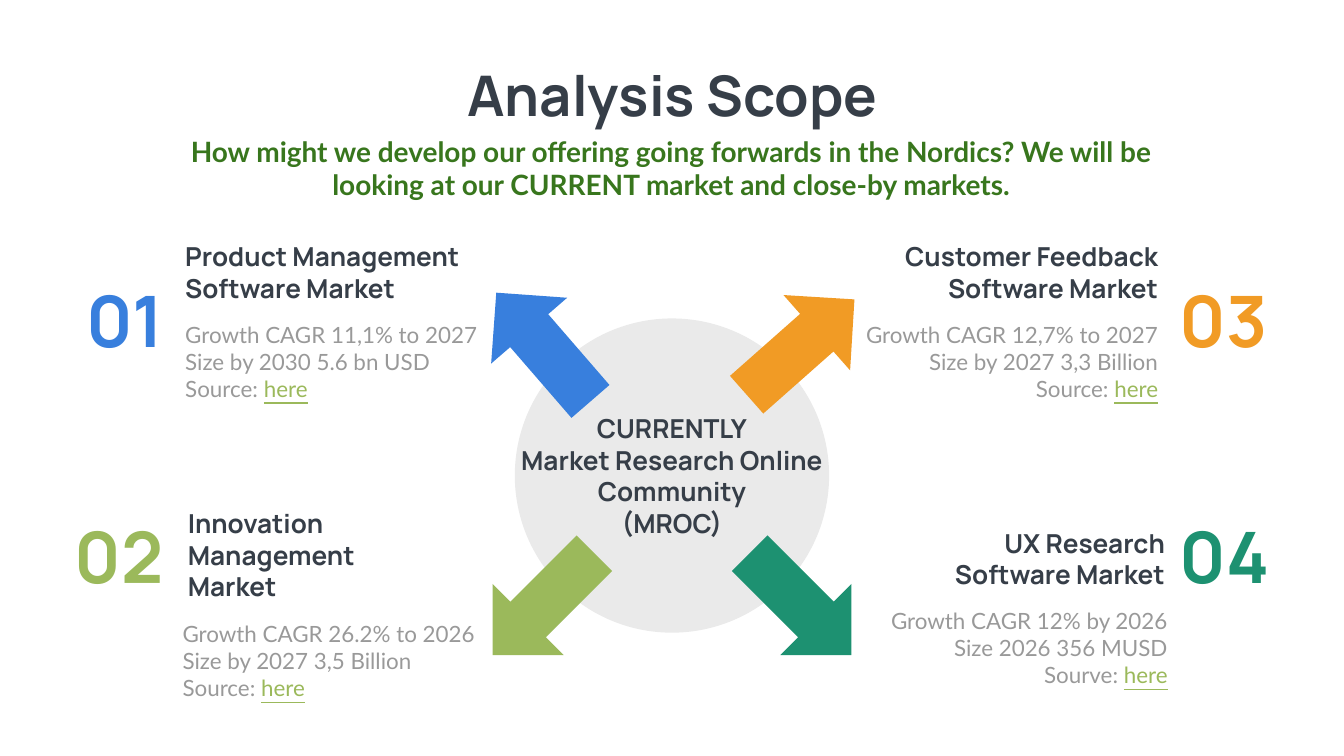
import pptx
import pptx.dml.color
import pptx.enum.shapes
import pptx.enum.text
import pptx.util
from lxml import etree

Cm = pptx.util.Cm
SHAPE = pptx.enum.shapes.MSO_SHAPE
ALIGN = pptx.enum.text.PP_ALIGN
ANCHOR = pptx.enum.text.MSO_ANCHOR
NS = "{http://schemas.openxmlformats.org/drawingml/2006/main}"

COLORS = {
    "dark": "363E48", "gray": "999999", "deep": "38761D", "disc": "EAEAEA",
    "blue": "387FDD", "orange": "F19B25", "green": "9BB95B", "teal": "1D9171",
}


def rgb(name):
    return pptx.dml.color.RGBColor.from_string(COLORS[name])


def add_run(p, text, size=14, font="Manrope", color="dark", bold=True, underline=False):
    r = p.add_run()
    r.text = text
    r.font.size = pptx.util.Pt(size)
    r.font.name = font
    r.font.bold = bold
    r.font.underline = underline
    r.font.color.rgb = rgb(color)


class ScopeSlide:
    def __init__(self, prs, layout):
        self.s = prs.slides.add_slide(prs.slide_layouts[layout])

    def fill_text(self, sp, text, align=ALIGN.LEFT, anchor=ANCHOR.TOP, **fmt):
        tf = sp.text_frame
        tf.word_wrap = True
        tf.auto_size = pptx.enum.text.MSO_AUTO_SIZE.NONE
        tf.vertical_anchor = anchor
        tf.margin_left = tf.margin_right = Cm(0.1)
        tf.margin_top = tf.margin_bottom = Cm(0.05)
        for i, line in enumerate(text.split("\n")):
            p = tf.add_paragraph() if i else tf.paragraphs[0]
            p.alignment = align
            p.space_before = pptx.util.Pt(0)
            add_run(p, line, **fmt)
        return tf

    def place(self, sp, x, y, w, h):
        sp.left, sp.top, sp.width, sp.height = Cm(x), Cm(y), Cm(w), Cm(h)

    def text(self, box, text, **fmt):
        sp = self.s.shapes.add_textbox(*map(Cm, box))
        self.fill_text(sp, text, **fmt)

    def title(self, box, text, **fmt):
        sp = self.s.shapes.title
        self.place(sp, *box)
        self.fill_text(sp, text, **fmt)

    def details(self, idx, box, text, align):
        sp = self.s.placeholders[idx]
        self.place(sp, *box)
        tf = self.fill_text(sp, text, align=align, size=12, font="Lato",
                            color="gray", bold=False)
        for p in tf.paragraphs:
            pPr = p._p.get_or_add_pPr()
            pPr.set("marL", "0")
            pPr.set("indent", "0")
            etree.SubElement(pPr, NS + "buNone")
        add_run(tf.paragraphs[-1], "here", size=12, font="Lato", color="green",
                bold=False, underline=True)

    def shape(self, kind, cx, cy, w, h, color, rotation=0):
        sp = self.s.shapes.add_shape(kind, Cm(cx - w / 2), Cm(cy - h / 2), Cm(w), Cm(h))
        sp.rotation = rotation
        sp.shadow.inherit = False
        sp.fill.solid()
        sp.fill.fore_color.rgb = rgb(color)
        sp.line.fill.background()


def main():
    prs = pptx.Presentation()
    prs.slide_width, prs.slide_height = Cm(25.4), Cm(14.29)
    slide = ScopeSlide(prs, 4)

    slide.title((6.12, 1.09, 13.18, 1.37), "Analysis Scope", align=ALIGN.CENTER, size=30)
    slide.text((2.77, 2.49, 19.84, 1.37),
               "How might we develop our offering going forwards in the Nordics? "
               "We will be looking at our CURRENT market and close-by markets.",
               align=ALIGN.CENTER, size=15, font="Lato", color="deep")

    cx, cy, d, reach = 12.7, 8.99, 5.94, 2.43
    slide.shape(SHAPE.OVAL, cx, cy, d, d, "disc")
    slide.text((cx - d / 2, cy - d / 2, d, d),
               "CURRENTLY\nMarket Research Online Community\n(MROC)",
               align=ALIGN.CENTER, anchor=ANCHOR.MIDDLE)

    left, right = ALIGN.LEFT, ALIGN.RIGHT
    markets = [
        ("blue", -1, -1, 229.1, "Product Management Software Market", (3.4, 4.5, 5.94),
         "Growth CAGR 11,1% to 2027\nSize by 2030 5.6 bn USD\nSource: ", (3.4, 6.02, 5.84)),
        ("green", -1, 1, 135, "Innovation Management Market", (3.45, 9.55, 5),
         "Growth CAGR 26.2% to 2026\nSize by 2027 3,5 Billion\nSource: ", (3.35, 11.68, 5.84)),
        ("orange", 1, -1, 318.5, "Customer Feedback Software Market", (16.33, 4.5, 5.66),
         "Growth CAGR 12,7% to 2027\nSize by 2027 3,3 Billion\nSource: ", (16.05, 6.02, 5.94)),
        ("teal", 1, 1, 45, "UX Research Software Market", (17.12, 9.91, 5),
         "Growth CAGR 12% by 2026\nSize 2026 356 MUSD\nSourve: ", (16.66, 11.43, 5.51)),
    ]
    for i, (color, dx, dy, angle, name, name_box, facts, facts_box) in enumerate(markets, 1):
        inner, outer = (left, right) if dx < 0 else (right, left)
        slide.shape(SHAPE.RIGHT_ARROW, cx + dx * reach, cy + dy * reach, 2.72, 1.9,
                    color, angle)
        slide.text((1.04 if dx < 0 else 22.2, 5.18 if dy < 0 else 9.63, 2.16, 1.7),
                   f"{i:02d}", align=outer, size=38, color=color)
        slide.text((*name_box, 0.69), name, align=inner)
        slide.details(i, (*facts_box, 1.63), facts, inner)

    prs.save("out.pptx")


if __name__ == "__main__":
    main()
